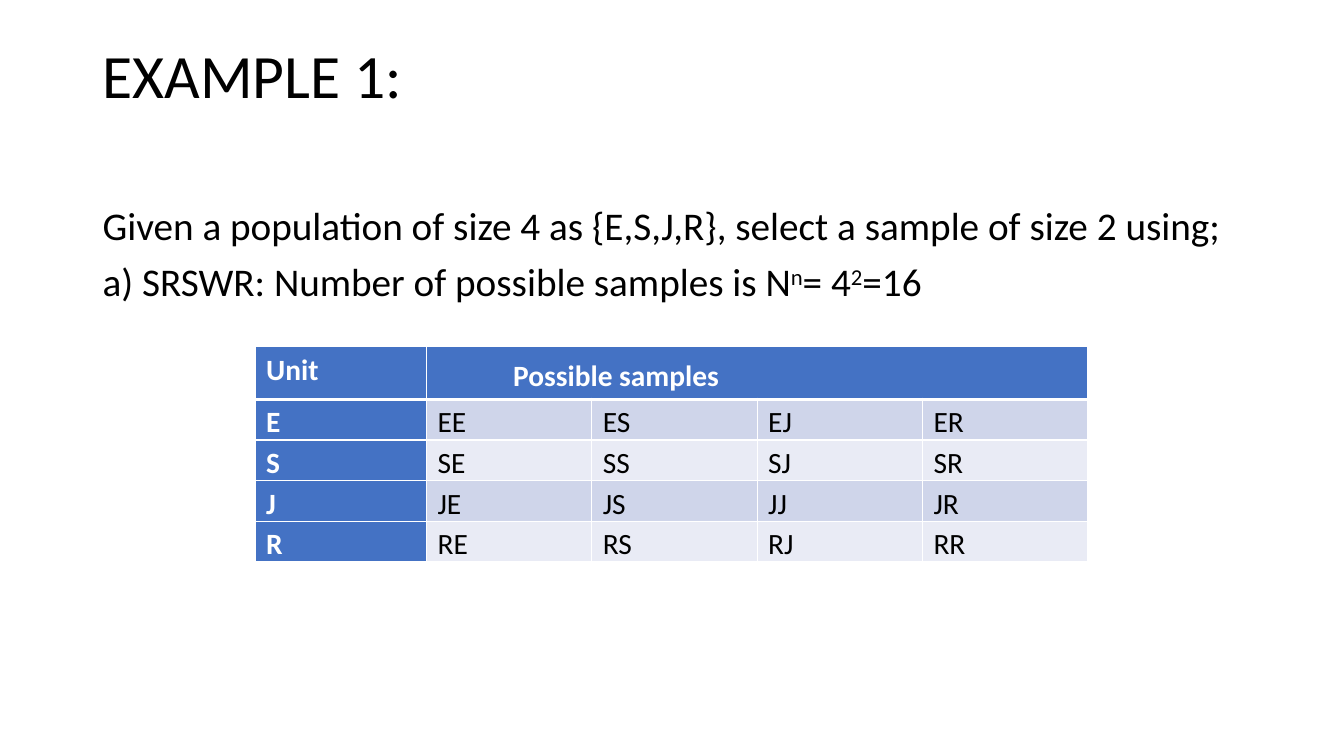
from pptx import Presentation
from pptx.dml.color import RGBColor
from pptx.enum.text import MSO_ANCHOR
from pptx.oxml import parse_xml
from pptx.oxml.ns import nsdecls
from pptx.util import Inches, Pt

THEME = {
    "font": "Calibri", "title": 44, "body": 28, "cell": 21,
    "ink": "000000", "white": "FFFFFF", "head": "4472C4",
    "bands": ("CFD5EA", "E9EBF5"),
}


def style(para, size, ink, line, bold=False):
    para.line_spacing = line
    for run in para.runs:
        run.font.name = THEME["font"]
        run.font.size = Pt(size)
        run.font.bold = bold
        run.font.color.rgb = RGBColor.from_string(ink)


def paint(cell, fill, top, base):
    props = cell._tc.get_or_add_tcPr()
    for side, width in (("L", 1), ("R", 1), ("T", top), ("B", base)):
        props.append(parse_xml(
            f'<a:ln{side} {nsdecls("a")} w="{Pt(width)}"><a:solidFill>'
            f'<a:srgbClr val="{THEME["white"]}"/></a:solidFill></a:ln{side}>'))
    cell.fill.solid()
    cell.fill.fore_color.rgb = RGBColor.from_string(fill)


deck = Presentation()
deck.slide_width, deck.slide_height = Inches(13.33), Inches(7.5)
slide = deck.slides.add_slide(deck.slide_layouts[6])
left, wide = Inches(0.92), Inches(11.5)

# Title
title = slide.shapes.add_textbox(left, Inches(0.4), wide, Inches(1.45)).text_frame
title.word_wrap = True
title.vertical_anchor = MSO_ANCHOR.TOP
title.text = "EXAMPLE 1:"
style(title.paragraphs[0], THEME["title"], THEME["ink"], 0.9)

# Task, with raised powers
body = slide.shapes.add_textbox(left, Inches(2), wide, Inches(4.76)).text_frame
body.word_wrap = True
body.text = ("Given a population of size 4 as {E,S,J,R}, select a sample of size 2 using;\n"
             "a) SRSWR: Number of possible samples is N")
for text, raised in (("n", True), ("= 4", False), ("2", True), ("=16", False)):
    run = body.paragraphs[1].add_run()
    run.text = text
    if raised:
        run._r.get_or_add_rPr().set("baseline", "30000")
for para in body.paragraphs:
    para.space_before = Pt(10)
    style(para, THEME["body"], THEME["ink"], 0.9)

# Table of ordered pairs
units = "ESJR"
rows = [["Unit", "Possible samples", "", "", ""]]
rows += [[a] + [a + b for b in units] for a in units]
grid = slide.shapes.add_table(5, 5, Inches(2.53), Inches(3.44),
                              Inches(8.27), Inches(2.03)).table
grid.first_row = grid.horz_banding = False
for i in range(5):
    grid.columns[i].width = Inches(1.64 if i else 1.7)
    grid.rows[i].height = Inches(0.38 if i else 0.51)

for i, row in enumerate(rows):
    for j, text in enumerate(row):
        cell = grid.cell(i, j)
        key = i == 0 or j == 0
        cell.margin_left = cell.margin_right = Inches(0.11)
        cell.margin_top = cell.margin_bottom = 0
        cell.text = text
        style(cell.text_frame.paragraphs[0], THEME["cell"],
              THEME["white"] if key else THEME["ink"], 1.15, key)
        paint(cell, THEME["head"] if key else THEME["bands"][(i - 1) % 2],
              3 if i == 1 else 1, 1 if i else 3)

# Heading across the samples
span = grid.cell(0, 1)
span.merge(grid.cell(0, 4))
span.margin_top = span.margin_bottom = Inches(0.06)
span.text_frame.paragraphs[0]._p.get_or_add_pPr().set("marL", str(Inches(0.75)))

deck.save("out.pptx")
